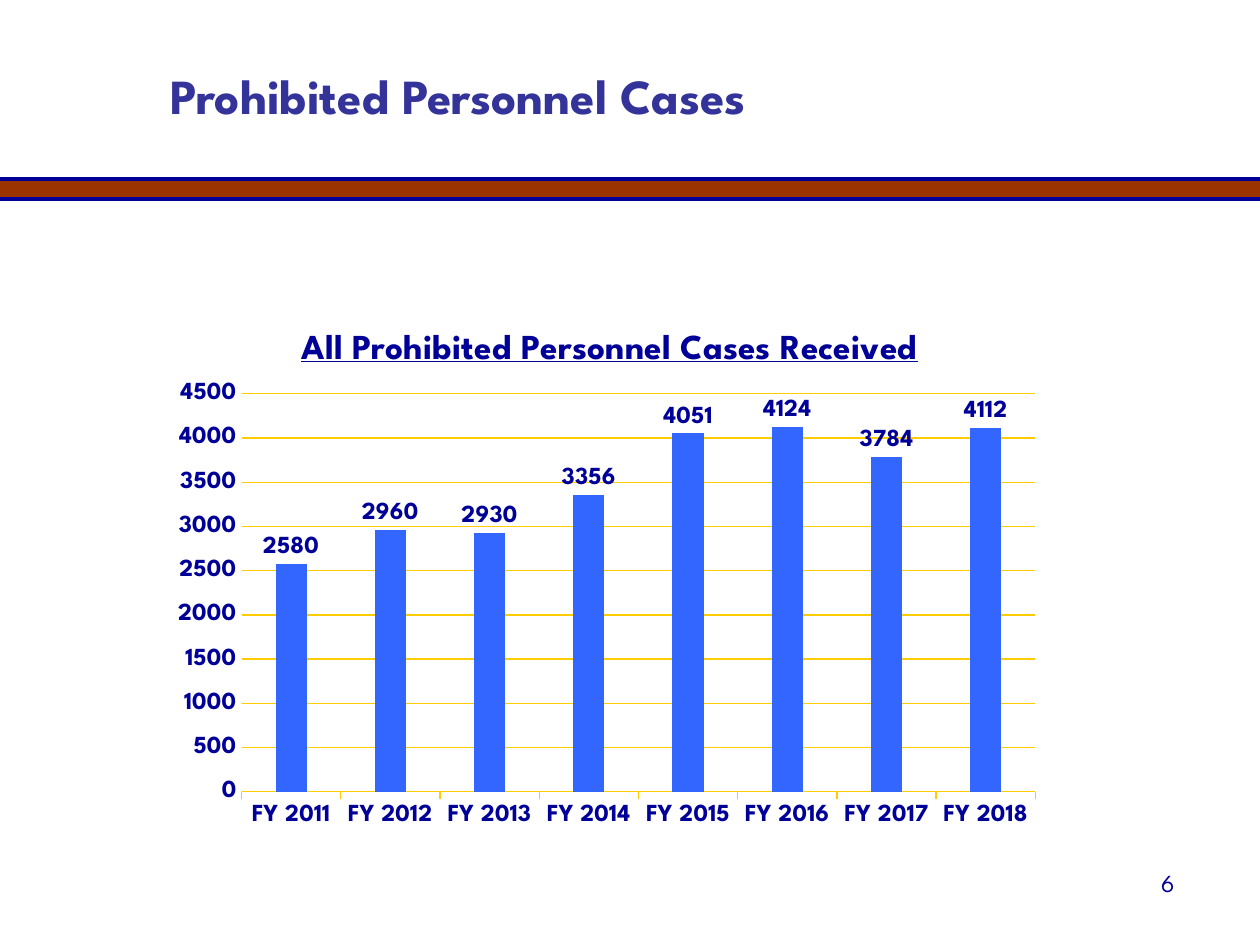
from lxml import etree
from pptx import Presentation
from pptx.chart.data import CategoryChartData
from pptx.dml.color import RGBColor
from pptx.enum.chart import XL_CHART_TYPE as Kind, XL_LABEL_POSITION as Spot
from pptx.enum.chart import XL_TICK_MARK as Tick
from pptx.enum.shapes import MSO_CONNECTOR as Link
from pptx.enum.text import MSO_ANCHOR as Anchor, PP_ALIGN as Align
from pptx.oxml.ns import qn
from pptx.util import Inches, Pt

# Content
TITLE = "Prohibited Personnel Cases"
HEAD = "All Prohibited Personnel Cases Received"
PAGE = "6"
CASES = {2011: 2580, 2012: 2960, 2013: 2930, 2014: 3356,
         2015: 4051, 2016: 4124, 2017: 3784, 2018: 4112}
FACE, NAVY, GOLD = "League Spartan", "000099", "FFCC00"
RULES = [(1.5, "9A3300", 12), (1.58, NAVY, 2), (1.42, NAVY, 2)]


def paint(color, code):
    color.rgb = RGBColor.from_string(code)


def style(font, size, code=NAVY, bold=True):
    font.name, font.size, font.bold = FACE, Pt(size), bold
    paint(font.color, code)


def stroke(line, code, width):
    paint(line.color, code)
    line.width = Pt(width)


def place(parent, index, **spots):
    """Fix a chart part at fractions of the chart area."""
    for old in parent.findall(qn("c:layout")):
        parent.remove(old)
    layout = etree.Element(qn("c:layout"))
    parent.insert(index, layout)
    manual = etree.SubElement(layout, qn("c:manualLayout"))
    if "w" in spots:
        etree.SubElement(manual, qn("c:layoutTarget")).set("val", "inner")
    for key in ("x", "y"):
        etree.SubElement(manual, qn(f"c:{key}Mode")).set("val", "edge")
    for key, value in spots.items():
        etree.SubElement(manual, qn(f"c:{key}")).set("val", str(value))


deck = Presentation()
deck.slide_width, deck.slide_height = Inches(10), Inches(7.5)
slide = deck.slides.add_slide(deck.slide_layouts[5])
shapes = slide.shapes

# Banner rules
for y, code, width in RULES:
    rule = shapes.add_connector(Link.STRAIGHT, 0, Inches(y), Inches(10), Inches(y))
    stroke(rule.line, code, width)
    etree.SubElement(rule._element.spPr, qn("a:effectLst"))

# Title
title = shapes.title
title.left, title.top = Inches(1.25), Inches(0.2)
title.width, title.height = Inches(7.99), Inches(1.1)
frame = title.text_frame
frame.text = TITLE
frame.vertical_anchor = Anchor.MIDDLE
frame.paragraphs[0].alignment = Align.LEFT
style(frame.paragraphs[0].runs[0].font, 28, "333399")

# Page number
frame = shapes.add_textbox(Inches(8.37), Inches(6.67), Inches(1.05), Inches(0.5)).text_frame
frame.word_wrap = True
frame.text = PAGE
frame.vertical_anchor = Anchor.BOTTOM
frame.paragraphs[0].alignment = Align.RIGHT
style(frame.paragraphs[0].runs[0].font, 14, bold=False)

# Chart
data = CategoryChartData()
data.categories = [f"FY {year}" for year in CASES]
data.add_series("Series 1", list(CASES.values()))
chart = shapes.add_chart(Kind.COLUMN_CLUSTERED, Inches(1.28), Inches(2.4),
                         Inches(7.08), Inches(4.27), data).chart
chart.has_legend = False
style(chart.font, 14)

# Chart title
chart.has_title = True
head = chart.chart_title
head.include_in_layout = False
head.text_frame.text = HEAD
font = head.text_frame.paragraphs[0].runs[0].font
style(font, 20)
font.underline = True
place(head._element, 1, x=0.15, y=0.04)
place(chart._chartSpace.chart.plotArea, 0, x=0.09, y=0.17, w=0.89, h=0.74)

# Axes
years, scale = chart.category_axis, chart.value_axis
for axis in (years, scale):
    style(axis.tick_labels.font, 14)
years.major_tick_mark = Tick.OUTSIDE
stroke(years.format.line, GOLD, 0.75)
scale.minimum_scale, scale.maximum_scale, scale.major_unit = 0, 4500, 500
scale.major_tick_mark = Tick.NONE
scale.format.line.fill.background()
stroke(scale.major_gridlines.format.line, GOLD, 0.75)

# Columns and their labels
plot = chart.plots[0]
plot.gap_width, plot.overlap, plot.vary_by_categories = 219, -27, False
fill = plot.series[0].format.fill
fill.solid()
paint(fill.fore_color, "3366FF")
plot.has_data_labels = True
labels = plot.data_labels
labels.show_value = True
labels.position = Spot.OUTSIDE_END
style(labels.font, 14)

deck.save("out.pptx")
